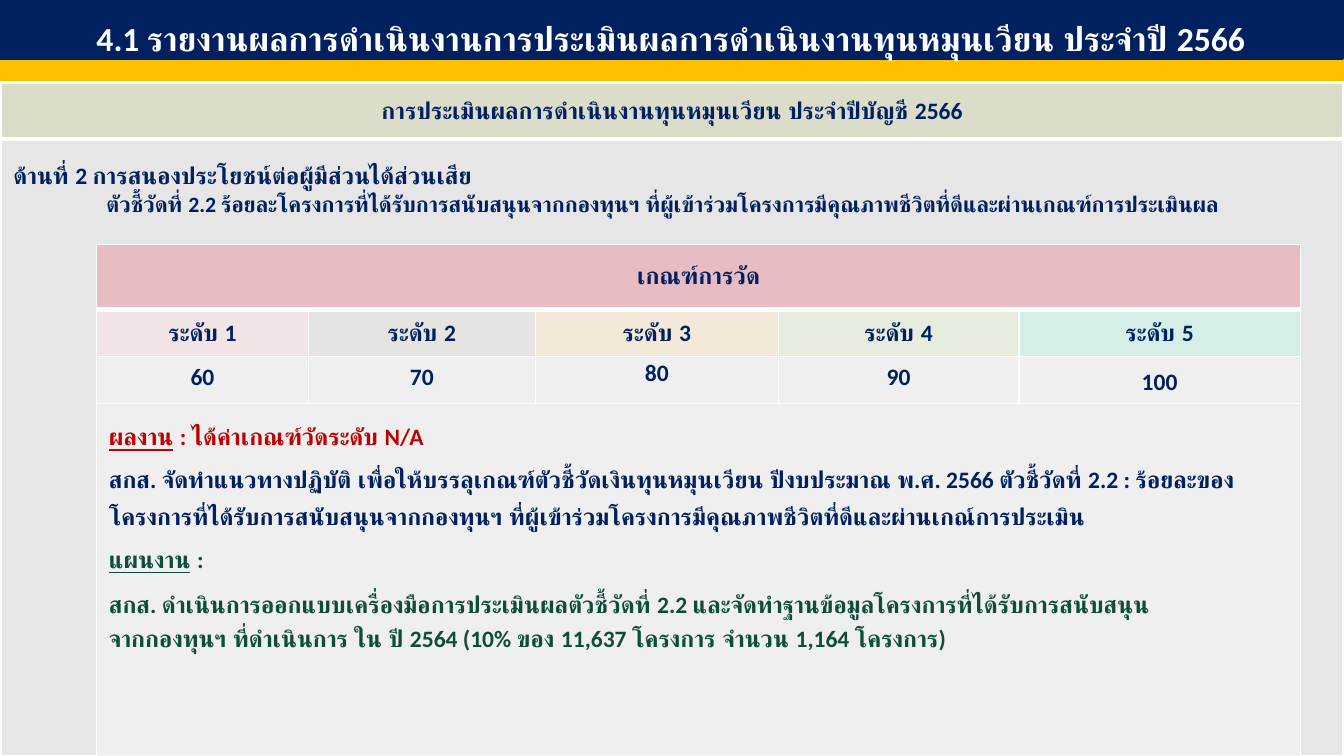
from lxml import etree
from pptx import Presentation
from pptx import util as u
from pptx.dml.color import RGBColor
from pptx.enum import shapes, text
from pptx.oxml.ns import qn

WIDTH, HEIGHT = 11.11, 6.25
NAVY = RGBColor(0x00, 0x20, 0x60)
GOLD = RGBColor(0xFF, 0xC0, 0x00)
WHITE = RGBColor(0xFF, 0xFF, 0xFF)
RED = RGBColor(0xC0, 0x00, 0x00)
GREEN = RGBColor(0x0E, 0x4D, 0x3C)
SAGE = RGBColor(0xDB, 0xDC, 0xC9)
GREY = RGBColor(0xE7, 0xE6, 0xE6)
PALE = RGBColor(0xF2, 0xF2, 0xF2)
PINK = RGBColor(0xE8, 0xAB, 0xB5)
LEVEL_COLOURS = [RGBColor(0xFA, 0xE4, 0xE5), RGBColor(0xE6, 0xE4, 0xDF),
                 RGBColor(0xFC, 0xEB, 0xD1), RGBColor(0xE8, 0xF3, 0xDA),
                 RGBColor(0xC8, 0xF5, 0xE8)]
TARGETS = [60, 70, 80, 90, 100]
TARGET_SPACING = {80: 1.07, 100: 1.2}
PLAIN_TABLE = "{2D5ABB26-0587-4C30-8999-92F81FD0307C}"
CENTRE, LEFT = text.PP_ALIGN.CENTER, text.PP_ALIGN.LEFT
MIDDLE, TOP = text.MSO_ANCHOR.MIDDLE, text.MSO_ANCHOR.TOP


def write(para, words, label="", colour=NAVY, size=14, align=LEFT, spacing=1.0, before=0, after=0):
    """Fill a paragraph with bold words after an optional underlined label."""
    if label:
        span = para.add_run()
        span.text = label
        span.font.underline = True
        para.add_run().text = words
    else:
        para.text = words
    para.alignment, para.line_spacing = align, spacing
    para.space_before, para.space_after = u.Pt(before), u.Pt(after)
    font = para.font
    font.name, font.size, font.bold = "Calibri", u.Pt(size), True
    font.color.rgb = colour


def add_bar(page, box, colour):
    """Draw a solid bar and return it."""
    bar = page.shapes.add_shape(shapes.MSO_SHAPE.RECTANGLE, *map(u.Inches, box))
    bar.shadow.inherit = False
    bar.fill.solid()
    bar.fill.fore_color.rgb = colour
    bar.line.color.rgb = colour
    bar.line.width = u.Pt(1)
    return bar


def add_plain_table(page, box, columns, rows):
    """Add an unstyled table whose columns and rows share out the box."""
    left, top, width, height = box
    frame = page.shapes.add_table(len(rows), len(columns), *map(u.Inches, box))
    table = frame.table
    table.first_row = table.horz_banding = False
    table._tbl.tblPr.find(qn("a:tableStyleId")).text = PLAIN_TABLE
    for column, share in zip(table.columns, columns):
        column.width = u.Inches(width * share / sum(columns))
    for row, share in zip(table.rows, rows):
        row.height = u.Inches(height * share / sum(rows))
    return table


def style_cell(cell, colour, opacity=100, top=1, bottom=1, anchor=TOP, side=0.1, edge=0.05):
    """Give a cell white borders, a fill, an anchor and margins."""
    cell.vertical_anchor = anchor
    cell.margin_left = cell.margin_right = u.Inches(side)
    cell.margin_top = cell.margin_bottom = u.Inches(edge)
    properties = cell._tc.get_or_add_tcPr()
    for name, points in (("lnL", 1), ("lnR", 1), ("lnT", top), ("lnB", bottom)):
        line = etree.SubElement(properties, qn(f"a:{name}"), w=str(u.Pt(points)))
        paint = etree.SubElement(line, qn("a:solidFill"))
        etree.SubElement(paint, qn("a:srgbClr"), val=str(WHITE))
    cell.fill.solid()
    cell.fill.fore_color.rgb = colour
    if opacity < 100:
        shade = properties.find(qn("a:solidFill")).find(qn("a:srgbClr"))
        etree.SubElement(shade, qn("a:alpha"), val=str(opacity * 1000))


def add_title(page, box):
    """Draw the navy title bar."""
    frame = add_bar(page, box, NAVY).text_frame
    frame.word_wrap = True
    frame.vertical_anchor = MIDDLE
    write(frame.paragraphs[0],
          "4.1 รายงานผลการดำเนินงานการประเมินผลการดำเนินงานทุนหมุนเวียน ประจำปี 2566",
          colour=WHITE, size=20, align=CENTRE, spacing=1.5)


def add_section(page, box):
    """Draw the outer table with the section heading and the indicator."""
    table = add_plain_table(page, box, [1], [0.46, 5.1])
    heading, body = table.cell(0, 0), table.cell(1, 0)
    style_cell(heading, SAGE, bottom=3, anchor=MIDDLE, edge=0.07)
    write(heading.text_frame.paragraphs[0],
          "การประเมินผลการดำเนินงานทุนหมุนเวียน ประจำปีบัญชี 2566", align=CENTRE)
    style_cell(body, GREY, top=3, edge=0.07)
    frame = body.text_frame
    write(frame.paragraphs[0], "ด้านที่ 2 การสนองประโยชน์ต่อผู้มีส่วนได้ส่วนเสีย",
          spacing=1.5, after=0.5)
    indicator = frame.add_paragraph()
    indicator._p.get_or_add_pPr().set("marL", str(u.Inches(0.77)))
    write(indicator, "ตัวชี้วัดที่ 2.2 ร้อยละโครงการที่ได้รับการสนับสนุนจากกองทุนฯ "
          "ที่ผู้เข้าร่วมโครงการมีคุณภาพชีวิตที่ดีและผ่านเกณฑ์การประเมินผล", size=13)


def add_results(cell):
    """Write the result and the work plan into the merged cell."""
    style_cell(cell, PALE, 80)
    frame = cell.text_frame
    write(frame.paragraphs[0], " : ได้ค่าเกณฑ์วัดระดับ N/A", "ผลงาน", RED, spacing=1.5)
    write(frame.add_paragraph(),
          "สกส. จัดทำแนวทางปฏิบัติ เพื่อให้บรรลุเกณฑ์ตัวชี้วัดเงินทุนหมุนเวียน "
          "ปีงบประมาณ พ.ศ. 2566 ตัวชี้วัดที่ 2.2 : ร้อยละของโครงการที่ได้รับการสนับสนุนจากกองทุนฯ "
          "ที่ผู้เข้าร่วมโครงการมีคุณภาพชีวิตที่ดีและผ่านเกณ์การประเมิน", spacing=1.5)
    write(frame.add_paragraph(), " :", "แผนงาน", GREEN, spacing=1.2, before=6)
    write(frame.add_paragraph(),
          "สกส. ดำเนินการออกแบบเครื่องมือการประเมินผลตัวชี้วัดที่ 2.2 "
          "และจัดทำฐานข้อมูลโครงการที่ได้รับการสนับสนุน\n"
          "จากกองทุนฯ ที่ดำเนินการ ใน ปี 2564 (10% ของ 11,637 โครงการ จำนวน 1,164 โครงการ)",
          colour=GREEN, spacing=1.2, before=6)


def add_criteria(page, box):
    """Draw the table of levels, targets and results."""
    table = add_plain_table(page, box, [1.75, 1.88, 2.01, 1.99, 2.33], [0.54, 0.39, 0.35, 3.04])
    for row in (0, 3):
        table.cell(row, 0).merge(table.cell(row, 4))
    heading = table.cell(0, 0)
    style_cell(heading, PINK, 70, bottom=3, anchor=MIDDLE)
    write(heading.text_frame.paragraphs[0], "เกณฑ์การวัด", align=CENTRE)
    for index, (colour, target) in enumerate(zip(LEVEL_COLOURS, TARGETS)):
        level, value = table.cell(1, index), table.cell(2, index)
        style_cell(level, colour, 60, top=3, anchor=MIDDLE)
        write(level.text_frame.paragraphs[0], f"ระดับ {index + 1}", align=CENTRE)
        side, edge = (0.07, 0) if target == 80 else (0.1, 0.05)
        style_cell(value, PALE, 80, side=side, edge=edge)
        write(value.text_frame.paragraphs[0], str(target), align=CENTRE,
              spacing=TARGET_SPACING.get(target, 1.0))
    add_results(table.cell(3, 0))


def main():
    """Build the slide and save it."""
    deck = Presentation()
    deck.slide_width, deck.slide_height = u.Inches(WIDTH), u.Inches(HEIGHT)
    page = deck.slides.add_slide(deck.slide_layouts[6])
    add_bar(page, (0, 0.5, WIDTH, 0.16), GOLD)
    add_section(page, (0.01, 0.69, WIDTH - 0.02, HEIGHT - 0.69))
    add_title(page, (-0.01, -0.02, WIDTH, 0.51))
    add_criteria(page, (0.8, 2.02, 9.95, 4.32))
    deck.save("out.pptx")


if __name__ == "__main__":
    main()
